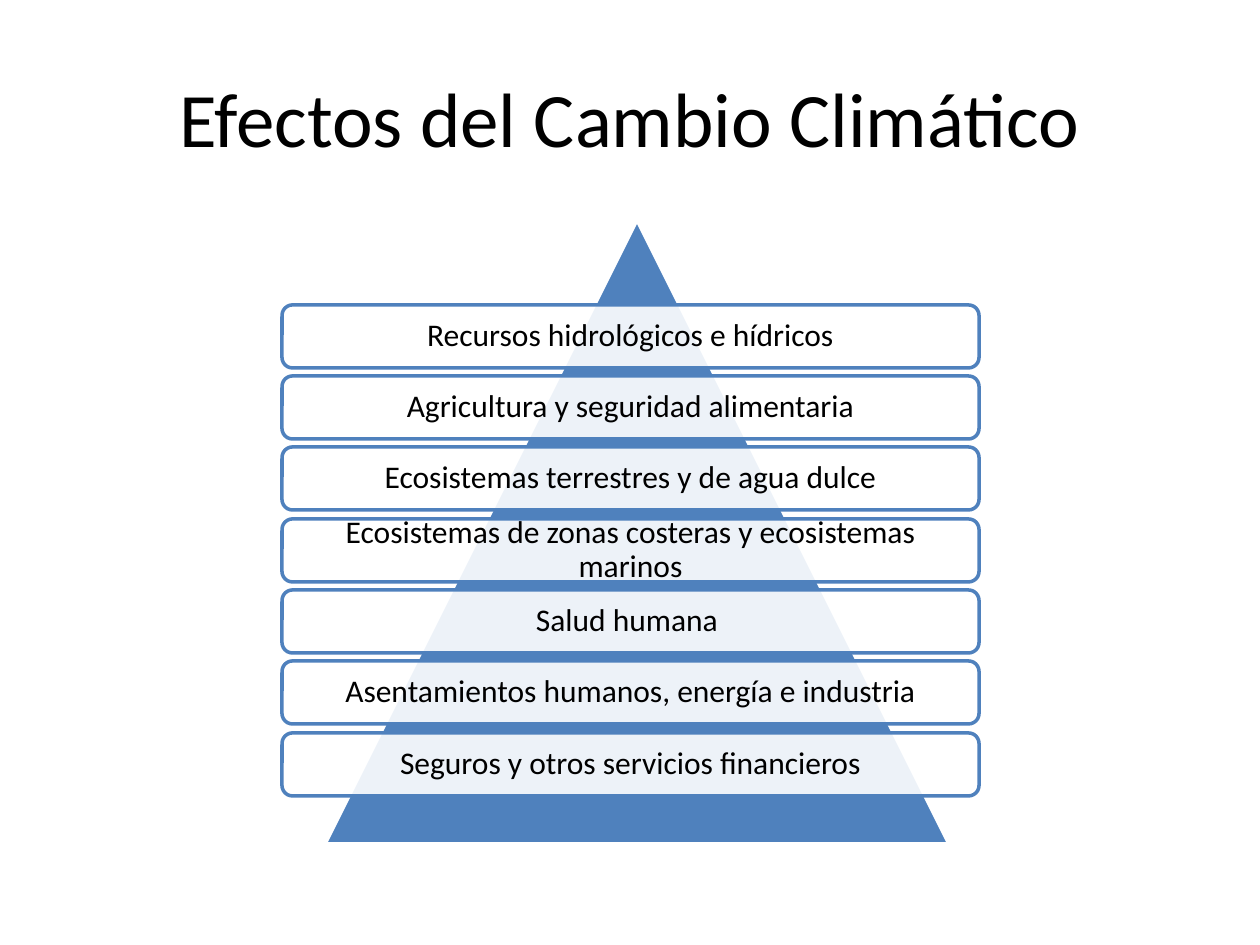
import dataclasses

import lxml.etree
import pptx
import pptx.dml.color
import pptx.enum.shapes
import pptx.enum.text
import pptx.oxml.ns
import pptx.util

SHAPE = pptx.enum.shapes.MSO_SHAPE
EMU_PER_PX = 914400 / 126


@dataclasses.dataclass(frozen=True)
class Theme:
    font: str = "Calibri"
    blue: str = "4F81BD"
    white: str = "FFFFFF"
    black: str = "000000"
    title_size: int = 44
    label_size: int = 18
    line_width: int = 2
    label_opacity: int = 90


THEME = Theme()

EFFECTS = [
    "Recursos hidrológicos e hídricos",
    "Agricultura y seguridad alimentaria",
    "Ecosistemas terrestres y de agua dulce",
    "Ecosistemas de zonas costeras y ecosistemas marinos",
    "Salud humana ",
    "Asentamientos humanos, energía e industria",
    "Seguros y otros servicios financieros",
]


def px(n):
    return pptx.util.Emu(round(n * EMU_PER_PX))


def rgb(value):
    return pptx.dml.color.RGBColor.from_string(value)


def write(sp, text, *, size, color=THEME.black, spacing=1.0, inset=9):
    tf = sp.text_frame
    tf.word_wrap = True
    tf.vertical_anchor = pptx.enum.text.MSO_ANCHOR.MIDDLE
    tf.margin_left = tf.margin_right = px(inset)
    tf.margin_top = tf.margin_bottom = px(inset)
    p = tf.paragraphs[0]
    p.alignment = pptx.enum.text.PP_ALIGN.CENTER
    p.line_spacing = spacing
    r = p.add_run()
    r.text = text
    r.font.name = THEME.font
    r.font.size = pptx.util.Pt(size)
    r.font.color.rgb = rgb(color)


def add_shape(s, kind, box, *, fill, line, opacity=100):
    sp = s.shapes.add_shape(kind, *map(px, box))
    sp.shadow.inherit = False
    sp.fill.solid()
    sp.fill.fore_color.rgb = rgb(fill)
    sp.line.color.rgb = rgb(line)
    sp.line.width = pptx.util.Pt(THEME.line_width)
    if opacity < 100:
        qn = pptx.oxml.ns.qn
        color = sp.fill._xPr.find(qn("a:solidFill")).find(qn("a:srgbClr"))
        lxml.etree.SubElement(color, qn("a:alpha")).set("val", str(opacity * 1000))
    return sp


def add_title(s, text):
    sp = s.shapes.add_textbox(*map(px, (63, 38, 1134, 157)))
    write(sp, text, size=THEME.title_size)


def add_pyramid(s):
    add_shape(s, SHAPE.ISOSCELES_TRIANGLE, (325, 220, 624, 624),
              fill=THEME.blue, line=THEME.white)


def add_labels(s, labels):
    left, first, last, width, height = 282, 305, 733, 697, 63
    for i, text in enumerate(labels):
        top = first + (last - first) * i // (len(labels) - 1)
        sp = add_shape(s, SHAPE.ROUNDED_RECTANGLE, (left, top, width, height),
                       fill=THEME.white, line=THEME.blue,
                       opacity=THEME.label_opacity)
        write(sp, text, size=THEME.label_size, spacing=0.9)


def main():
    prs = pptx.Presentation()
    prs.slide_width, prs.slide_height = px(1260), px(945)
    s = prs.slides.add_slide(prs.slide_layouts[6])
    add_title(s, "Efectos del Cambio Climático")
    add_pyramid(s)
    add_labels(s, EFFECTS)
    prs.save("out.pptx")


if __name__ == "__main__":
    main()
